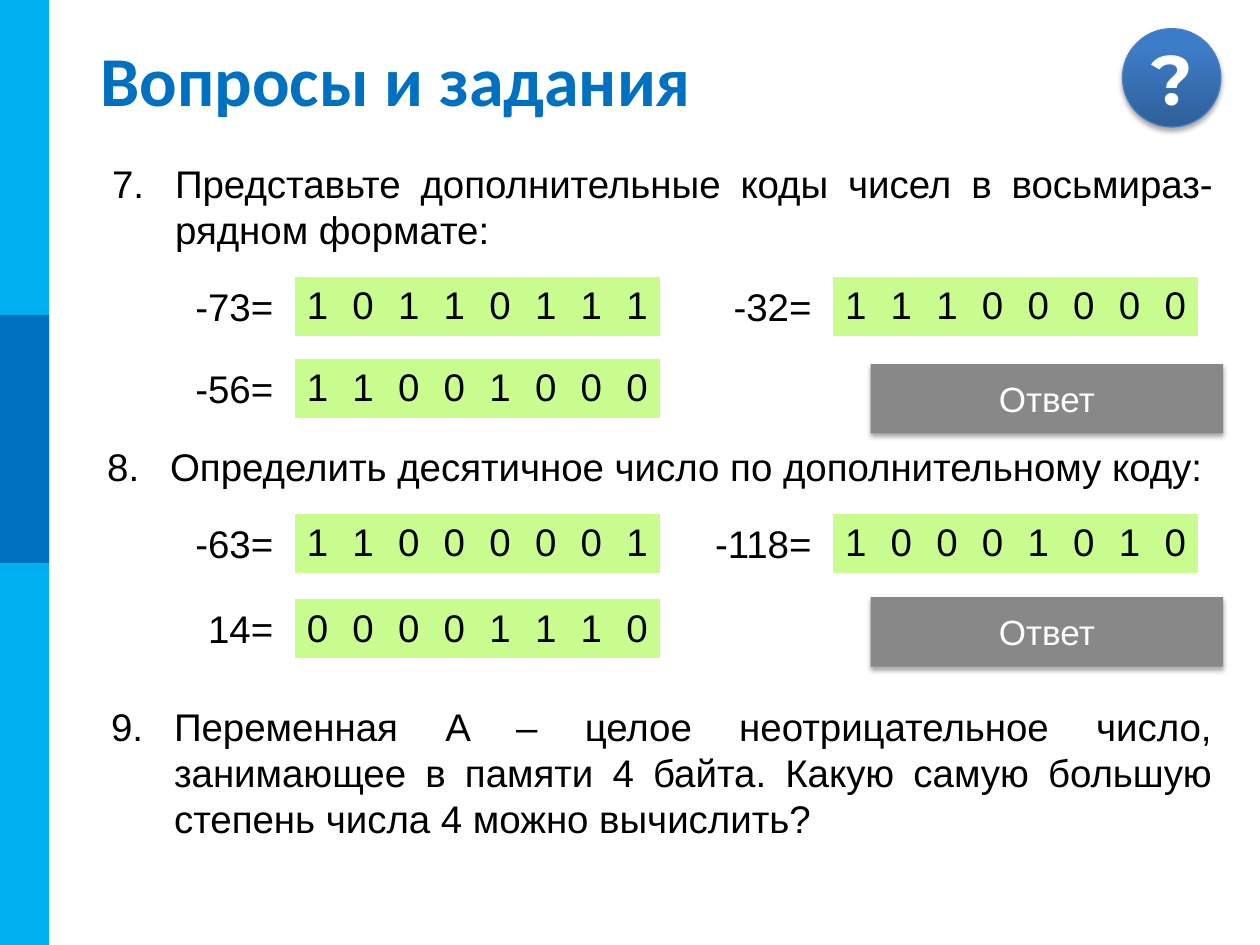
from copy import deepcopy as clone
from dataclasses import dataclass
from lxml.etree import SubElement as Sub
from pptx import Presentation as Deck
from pptx.dml.color import RGBColor as Rgb
from pptx.enum.shapes import MSO_SHAPE as Form
from pptx.enum.text import MSO_ANCHOR as Anchor, PP_ALIGN as Align
from pptx.oxml.ns import qn
from pptx.shapes.autoshape import Shape
from pptx.slide import Slide
from pptx.text.text import TextFrame as Frame
from pptx.util import Cm, Pt


@dataclass(frozen=True)
class Theme:
    sky: str = "00B0F0"
    blue: str = "0070C0"
    lime: str = "CAFD8F"
    gray: str = "888888"
    rim: str = "4B7EBC"
    ball: tuple = ((0, "2F5F99"), (0.8, "3D7CC7"), (1, "3A7CCB"))
    ink: str = "000000"
    white: str = "FFFFFF"
    body: str = "Arial"
    head: str = "Calibri"
    mark: str = "Montserrat"
    big: int = 40
    mid: int = 22
    small: int = 20
    plain: str = "{2D5ABB26-0587-4C30-8999-92F81FD0307C}"


@dataclass(frozen=True)
class Box:
    x: float
    y: float
    w: float
    h: float

    def place(self) -> tuple:
        return Cm(self.x), Cm(self.y), Cm(self.w), Cm(self.h)


@dataclass(frozen=True)
class Code:
    label: str
    bits: str
    x: float
    y: float


@dataclass(frozen=True)
class Task:
    num: int
    text: str
    box: Box
    align: Align


THEME = Theme()
CELL_W, CELL_H = 0.92, 1.18
LEFT, RIGHT = 5.94, 16.79

CODES = (
    Code("-73=", "10110111", LEFT, 5.58),
    Code("-32=", "11100000", RIGHT, 5.58),
    Code("-56=", "11001000", LEFT, 7.24),
    Code("-63=", "11000001", LEFT, 10.36),
    Code("-118=", "10001010", RIGHT, 10.36),
    Code("14=", "00001110", LEFT, 12.08),
)
TASKS = (
    Task(7, "Представьте дополнительные коды чисел в восьмираз-рядном формате:",
         Box(2.01, 3.1, 22.7, 2.13), Align.JUSTIFY),
    Task(8, "Определить десятичное число по дополнительному коду:",
         Box(1.91, 8.81, 23.49, 1.19), Align.LEFT),
    Task(9, "Переменная A – целое неотрицательное число, занимающее в памяти "
         "4 байта. Какую самую большую степень числа 4 можно вычислить?",
         Box(1.99, 14.05, 22.7, 3.07), Align.JUSTIFY),
)


def write(frame: Frame, text: str, align: Align, size: int = THEME.mid,
          face: str = THEME.body, tint: str = THEME.ink, bold: bool = False) -> None:
    para = frame.paragraphs[0]
    para.text = text
    para.alignment = align
    font = para.font
    font.size, font.name, font.bold = Pt(size), face, bold
    font.color.rgb = Rgb.from_string(tint)


def add_text(slide: Slide, box: Box, anchor: Anchor = Anchor.TOP) -> Frame:
    frame = slide.shapes.add_textbox(*box.place()).text_frame
    frame.word_wrap = True
    frame.vertical_anchor = anchor
    return frame


def add_form(slide: Slide, form: Form, box: Box, tint: str) -> Shape:
    shape = slide.shapes.add_shape(form, *box.place())
    shape.shadow.inherit = False
    shape.fill.solid()
    shape.fill.fore_color.rgb = Rgb.from_string(tint)
    shape.line.fill.background()
    return shape


def add_shade(shape: Shape) -> None:
    glow = Sub(shape.element.spPr.find(qn("a:effectLst")), qn("a:outerShdw"),
               blurRad=str(Pt(3.1)), dist=str(Pt(1.8)), dir="5400000", rotWithShape="0")
    tint = Sub(glow, qn("a:srgbClr"), val=THEME.ink)
    Sub(tint, qn("a:alpha"), val="35000")


def add_ball(slide: Slide) -> None:
    ball = add_form(slide, Form.OVAL, Box(22.63, 0.58, 1.98, 1.98), THEME.blue)
    ball.fill.gradient()
    ball.fill.gradient_angle = 90
    stops = ball.element.spPr.find(".//" + qn("a:gsLst"))
    stops.append(clone(stops[-1]))
    for stop, (pos, tint) in zip(ball.fill.gradient_stops, THEME.ball):
        stop.position = pos
        stop.color.rgb = Rgb.from_string(tint)
    ball.line.color.rgb = Rgb.from_string(THEME.rim)
    ball.line.width = Pt(0.75)
    add_shade(ball)
    write(ball.text_frame, "?", Align.CENTER, THEME.big, THEME.mark, THEME.white, True)


def add_code(slide: Slide, code: Code) -> None:
    wide = 3
    label = add_text(slide, Box(code.x - 0.18 - wide, code.y, wide, CELL_H))
    write(label, code.label, Align.RIGHT)
    count = len(code.bits)
    box = Box(code.x, code.y, CELL_W * count, CELL_H)
    table = slide.shapes.add_table(1, count, *box.place()).table
    table.first_row = table.horz_banding = False
    table._tbl.find(".//" + qn("a:tableStyleId")).text = THEME.plain
    for cell, bit in zip(table.iter_cells(), code.bits):
        cell.fill.solid()
        cell.fill.fore_color.rgb = Rgb.from_string(THEME.lime)
        cell.margin_left = cell.margin_right = 0
        cell.vertical_anchor = Anchor.MIDDLE
        write(cell.text_frame, bit, Align.CENTER)


def add_task(slide: Slide, task: Task) -> None:
    frame = add_text(slide, task.box)
    write(frame, task.text, task.align)
    props = frame.paragraphs[0]._p.get_or_add_pPr()
    dent = Cm(1.27)
    props.set("marL", str(dent))
    props.set("indent", str(-dent))
    num = Sub(props, qn("a:buAutoNum"), type="arabicPeriod", startAt=str(task.num))
    props.insert(0, num)


def add_key(slide: Slide, y: float) -> None:
    key = add_form(slide, Form.RECTANGLE, Box(17.55, y, 7.11, 1.4), THEME.gray)
    add_shade(key)
    write(key.text_frame, "Ответ", Align.CENTER, THEME.small, tint=THEME.white)


def main() -> None:
    deck = Deck()
    deck.slide_width, deck.slide_height = Cm(25.4), Cm(19.05)
    slide = deck.slides.add_slide(deck.slide_layouts[6])
    add_form(slide, Form.RECTANGLE, Box(0, 0, 0.99, 19.05), THEME.sky)
    add_form(slide, Form.RECTANGLE, Box(0, 6.35, 0.99, 5), THEME.blue)
    add_ball(slide)
    title = add_text(slide, Box(1.78, 0.76, 22.91, 1.63), Anchor.MIDDLE)
    write(title, "Вопросы и задания", Align.LEFT, THEME.big, THEME.head, THEME.blue, True)
    for task in TASKS:
        add_task(slide, task)
    for code in CODES:
        add_code(slide, code)
    for y in (7.34, 12.04):
        add_key(slide, y)
    deck.save("out.pptx")


if __name__ == "__main__":
    main()
